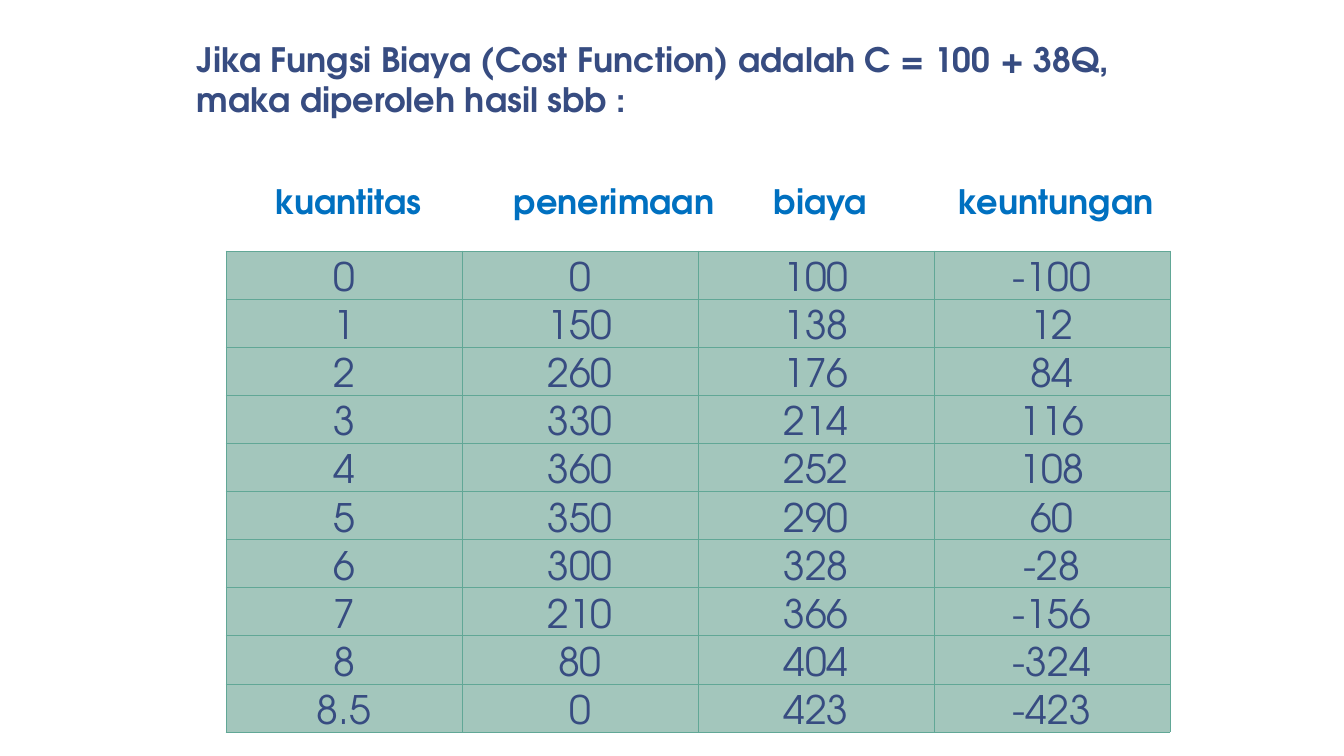
from lxml.etree import SubElement
from pptx import Presentation
from pptx.dml.color import RGBColor
from pptx.enum.text import MSO_ANCHOR, MSO_AUTO_SIZE, PP_ALIGN
from pptx.oxml.ns import qn
from pptx.util import Emu, Pt

FONT = "TeX Gyre Adventor"
NAVY, BLUE, SAGE, GREEN = "374C81", "0070C0", "A3C6BC", "61A796"
TITLE = ("Jika Fungsi Biaya (Cost Function) adalah C = 100 + 38Q, "
         "maka diperoleh hasil sbb :")
HEADINGS = [("kuantitas", 266, 168), ("penerimaan", 504, 224),
            ("biaya", 764, 115), ("keuntungan", 949, 220)]
QUANTITIES = [0, 1, 2, 3, 4, 5, 6, 7, 8, 8.5]
COL_WIDTH, ROW_HEIGHT = 236, 48


def px(n):
    """Turn slide pixels (100.8 to the inch) into EMU."""
    return Emu(round(n * 914400 / 100.8))


def rgb(color):
    return RGBColor.from_string(color)


def style(p, size, color, bold=False):
    p.font.name = FONT
    p.font.size = Pt(size)
    p.font.bold = bold
    p.font.color.rgb = rgb(color)


def add_label(slide, text, x, y, w, h, color, wrap=False):
    tf = slide.shapes.add_textbox(px(x), px(y), px(w), px(h)).text_frame
    tf.word_wrap = wrap
    tf.auto_size = MSO_AUTO_SIZE.SHAPE_TO_FIT_TEXT
    p = tf.paragraphs[0]
    p.text = text
    style(p, 24, color, bold=True)


def set_borders(cell, color):
    """Draw the four borders; they must precede the fill in the cell's XML."""
    tc_pr = cell._tc.get_or_add_tcPr()
    for side in ("a:lnL", "a:lnR", "a:lnT", "a:lnB"):
        ln = SubElement(tc_pr, qn(side), w=str(Pt(0.5)))
        fill = SubElement(ln, qn("a:solidFill"))
        SubElement(fill, qn("a:srgbClr"), val=color)


def fill_cell(cell, value):
    set_borders(cell, GREEN)
    cell.fill.solid()
    cell.fill.fore_color.rgb = rgb(SAGE)
    cell.margin_left = cell.margin_right = cell.margin_top = px(1)
    cell.margin_bottom = 0
    cell.vertical_anchor = MSO_ANCHOR.BOTTOM
    p = cell.text_frame.paragraphs[0]
    p.text = f"{value:g}"
    p.alignment = PP_ALIGN.CENTER
    style(p, 28, NAVY)


def profit_row(quantity):
    """Return quantity, revenue, cost and profit."""
    revenue = quantity * (170 - 20 * quantity)
    cost = 100 + 38 * quantity
    return quantity, revenue, cost, revenue - cost


def add_profit_table(slide, x, y):
    rows, cols = len(QUANTITIES), len(HEADINGS)
    table = slide.shapes.add_table(rows, cols, px(x), px(y), px(cols * COL_WIDTH),
                                   px(rows * ROW_HEIGHT)).table
    table.first_row = table.horz_banding = False
    for column in table.columns:
        column.width = px(COL_WIDTH)
    for row, quantity in zip(table.rows, QUANTITIES):
        row.height = px(ROW_HEIGHT)
        for cell, value in zip(row.cells, profit_row(quantity)):
            fill_cell(cell, value)


def main():
    prs = Presentation()
    prs.slide_width, prs.slide_height = px(1344), px(756)
    slide = prs.slides.add_slide(prs.slide_layouts[6])
    add_label(slide, TITLE, 187, 34, 982, 92, NAVY, wrap=True)
    add_profit_table(slide, 226, 251)
    for text, x, width in HEADINGS:
        add_label(slide, text, x, 176, width, 50, BLUE)
    prs.save("out.pptx")


if __name__ == "__main__":
    main()
